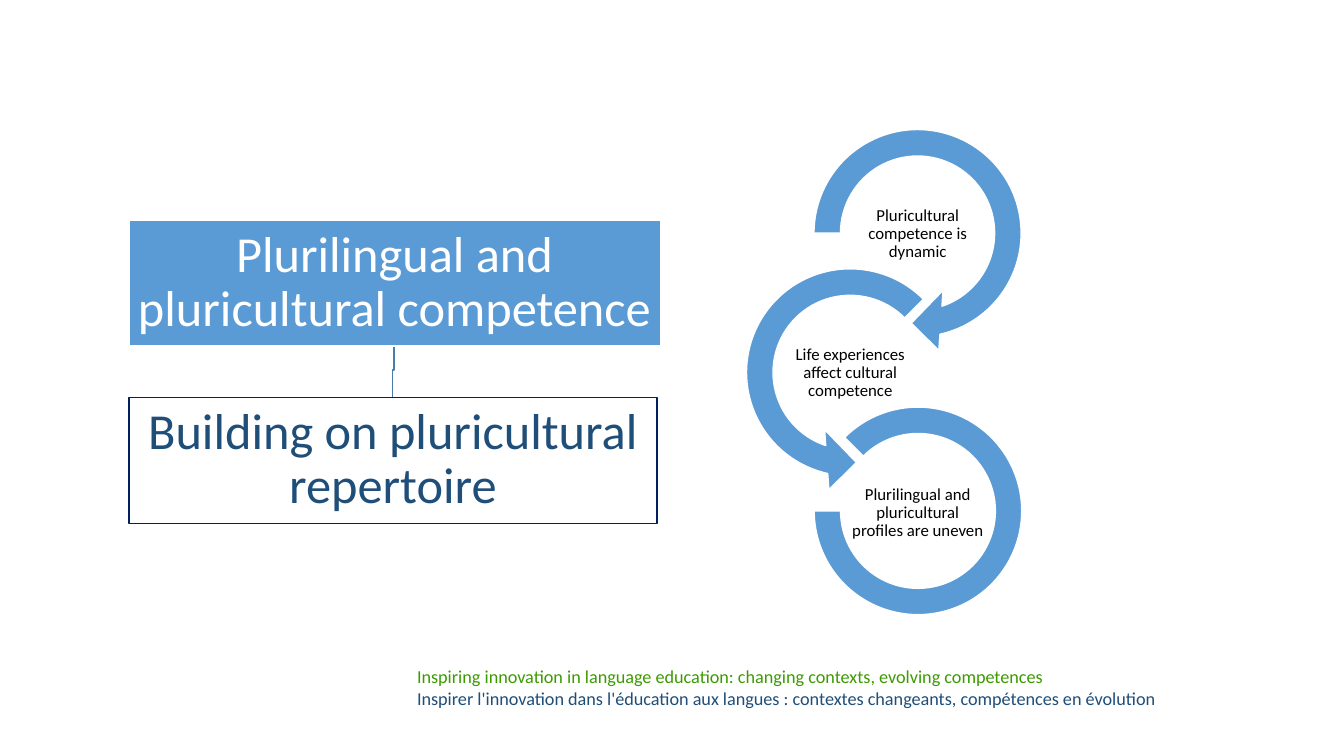
from pptx import Presentation
from pptx.dml.color import RGBColor
from pptx.enum.shapes import MSO_SHAPE
from pptx.enum.text import MSO_ANCHOR, MSO_AUTO_SIZE, PP_ALIGN
from pptx.util import Cm, Pt

COLORS = {
    "blue": "5B9BD5",
    "dark_blue": "1F4E79",
    "navy": "002060",
    "connector": "497CAB",
    "green": "3C9B00",
    "white": "FFFFFF",
    "black": "000000",
}


def write(para, text, size, color):
    span = para.add_run()
    span.text = text
    span.font.name = "Calibri"
    span.font.size = Pt(size)
    span.font.color.rgb = RGBColor.from_string(COLORS[color])


def center_text(frame, text, size, color, inset):
    frame.word_wrap = True
    frame.vertical_anchor = MSO_ANCHOR.MIDDLE
    frame.margin_left = frame.margin_right = Cm(inset)
    frame.margin_top = frame.margin_bottom = Cm(inset)
    para = frame.paragraphs[0]
    para.alignment = PP_ALIGN.CENTER
    para.line_spacing = 0.9
    write(para, text, size=size, color=color)


deck = Presentation()
deck.slide_width, deck.slide_height = Cm(33.87), Cm(19.05)
page = deck.slides.add_slide(deck.slide_layouts[6])

footer = page.shapes.add_textbox(Cm(10.26), Cm(16.64), Cm(20.12), Cm(1.37)).text_frame
footer.word_wrap = True
footer.auto_size = MSO_AUTO_SIZE.SHAPE_TO_FIT_TEXT
motto = footer.paragraphs[0]
write(motto, "Inspiring innovation in language education: changing contexts, evolving competences",
      size=13, color="green")
motto.add_line_break()
write(motto, "Inspirer l'innovation dans l'éducation aux langues : contextes changeants, compétences en évolution",
      size=13, color="dark_blue")

builder = page.shapes.build_freeform(Cm(9.93), Cm(8.71))
builder.add_line_segments(
    [(Cm(9.93), Cm(9.32)), (Cm(9.9), Cm(9.32)), (Cm(9.9), Cm(10.01))], close=False)
link = builder.convert_to_shape()
link.shadow.inherit = False
link.fill.background()
link.line.color.rgb = RGBColor.from_string(COLORS["connector"])
link.line.width = Pt(1)

topics = [
    ("Plurilingual and pluricultural competence", 5.54, 13.39, "blue", "white", "white"),
    ("Building on pluricultural repertoire", 10.01, 13.31, "white", "navy", "dark_blue"),
]
for text, top, width, fill, line, color in topics:
    box = page.shapes.add_shape(MSO_SHAPE.RECTANGLE, Cm(3.25), Cm(top), Cm(width), Cm(3.18))
    box.shadow.inherit = False
    box.fill.solid()
    box.fill.fore_color.rgb = RGBColor.from_string(COLORS[fill])
    box.line.color.rgb = RGBColor.from_string(COLORS[line])
    box.line.width = Pt(1)
    center_text(box.text_frame, text, size=36, color=color, inset=0.08)

rings = [
    ("Pluricultural competence is dynamic", MSO_SHAPE.CIRCULAR_ARROW,
     20.09, 2.84, 6.07, (0.11, 11.42, 45, 108, 0.125), 21.44, 5.05),
    ("Life experiences affect cultural competence", MSO_SHAPE.LEFT_CIRCULAR_ARROW,
     18.39, 6.35, 6.07, (0.11, 11.42, 63, 189, 0.125), 19.74, 8.56),
    ("Plurilingual and pluricultural profiles are uneven", MSO_SHAPE.BLOCK_ARC,
     20.52, 10.26, 5.23, (135, 108, 0.127), 21.44, 12.09),
]
for text, kind, left, top, size, adjustments, text_left, text_top in rings:
    ring = page.shapes.add_shape(kind, Cm(left), Cm(top), Cm(size), Cm(size))
    for index, value in enumerate(adjustments):
        ring.adjustments[index] = value
    ring.shadow.inherit = False
    ring.fill.solid()
    ring.fill.fore_color.rgb = RGBColor.from_string(COLORS["blue"])
    ring.line.color.rgb = RGBColor.from_string(COLORS["white"])
    ring.line.width = Pt(1)
    label = page.shapes.add_textbox(Cm(text_left), Cm(text_top), Cm(3.38), Cm(1.68))
    center_text(label.text_frame, text, size=12, color="black", inset=0.03)

deck.save("out.pptx")
